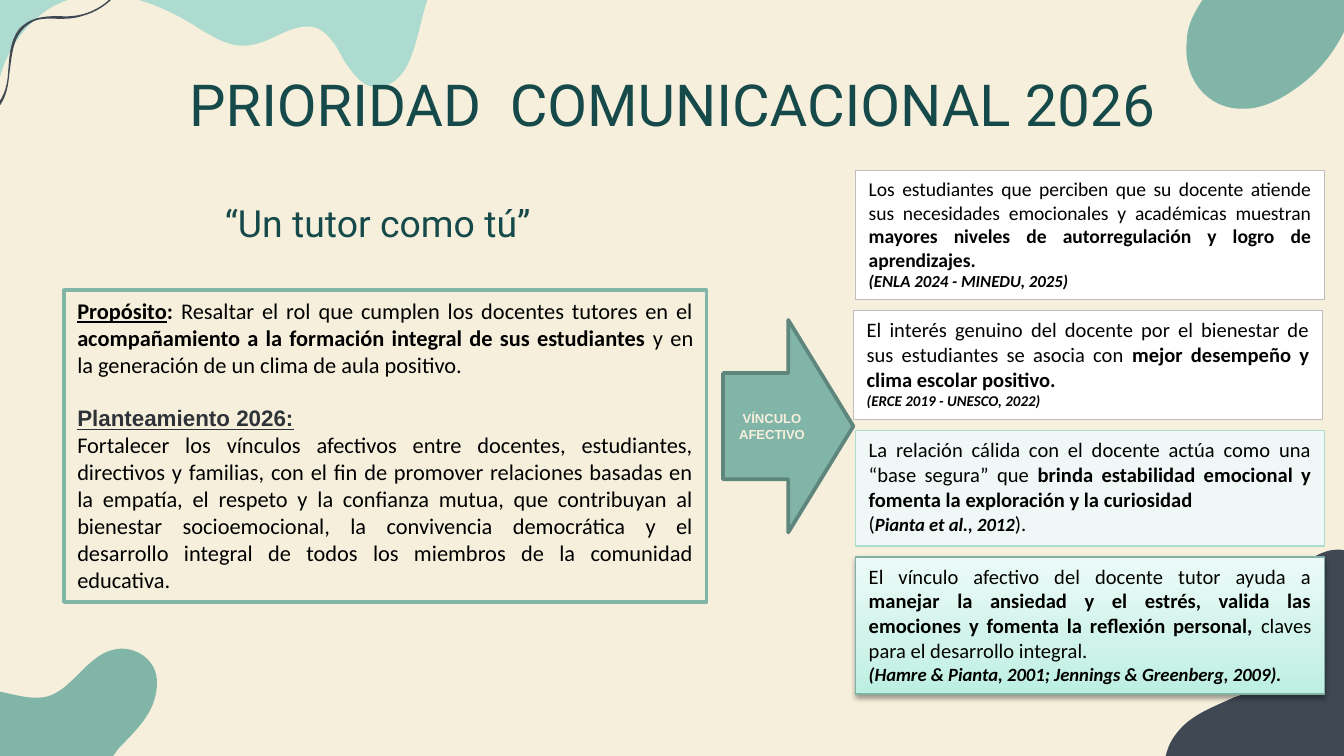
from copy import deepcopy
from dataclasses import dataclass

from lxml import etree
from pptx import Presentation
from pptx.dml.color import RGBColor
from pptx.enum.shapes import MSO_SHAPE
from pptx.enum.text import MSO_ANCHOR, MSO_AUTO_SIZE, PP_ALIGN
from pptx.oxml.ns import qn
from pptx.util import Pt

RECTANGLE, ARROW = MSO_SHAPE.RECTANGLE, MSO_SHAPE.RIGHT_ARROW
TOP, MIDDLE = MSO_ANCHOR.TOP, MSO_ANCHOR.MIDDLE
LEFT, CENTER, JUSTIFY = PP_ALIGN.LEFT, PP_ALIGN.CENTER, PP_ALIGN.JUSTIFY
GROW = MSO_AUTO_SIZE.SHAPE_TO_FIT_TEXT


@dataclass(frozen=True)
class Theme:
    cream: str = "F6EFDC"
    mint: str = "ADDBD0"
    green: str = "81B5A8"
    deep_green: str = "5F867C"
    slate: str = "3F4853"
    heading: str = "164A4A"
    subheading: str = "2E3338"
    black: str = "000000"
    white: str = "FFFFFF"
    gray: str = "BFBFBF"
    pale_mint: str = "EFF8F6"
    card_edge: str = "7DB2A5"
    card_gradient: tuple = ((0, "BCEFE1"), (0.35, "CFF3E9"), (1, "ECFBF7"))
    title_size: float = 31
    motto_size: float = 20
    body_size: float = 12
    card_size: float = 11
    small_card_size: float = 10.5
    cite_size: float = 10
    mid_cite_size: float = 9
    small_cite_size: float = 8
    arrow_size: float = 7


THEME = Theme()

# Outlines in points: a start point, then lines (x, y) and cubic curves (six numbers).
TOP_WAVE = [
    (201.6, -4.3), (-5, -4.3), (-5, 93.6), (-2.2, 75.6, -4.3, 56.2, 0.7, 38.9),
    (4.3, 27.4, 10.8, 17.3, 19.4, 10.1), (23.8, 5.8, 28.8, 2.9, 34.6, 0.7),
    (56.9, -8.6, 82.8, 0.7, 103, 13), (112.3, 18.7, 121.7, 25.2, 131.8, 24.5),
    (145.4, 23.8, 156.9, 10.8, 169.9, 15.1), (176.4, 18, 180.7, 25.2, 184.3, 32.4),
    (188.6, 38.9, 193.7, 46.1, 200.9, 46.8), (210.2, 47.5, 217.4, 38.9, 220.3, 30.2),
    (224.6, 19.4, 226.1, 6.5, 230.4, -3.6)]
RIBBON = [
    (69.8, -22.3), (68.4, -13.7, 64.1, -5.8, 57.6, 0.7), (49.7, 7.2, 41, 9.4, 31.7, 8.6),
    (23, 8.6, 15.8, 9.4, 10.1, 15.8), (5, 22.3, 5, 31.7, 4.3, 39.6),
    (3.6, 50.4, -0.7, 58.3, -10.8, 62.6), (-18.7, 66.2, -27.4, 66.2, -36, 67),
    (-43.2, 67, -51.1, 68.4, -56.2, 73.4), (-62.6, 79.2, -64.1, 90.7, -64.8, 99.4),
    (-65.5, 100.1, -64.1, 100.1, -64.1, 99.4), (-62.6, 87.8, -60.5, 74.9, -49, 70.6),
    (-41, 67, -31.7, 68.4, -23, 67), (-16.6, 66.2, -9.4, 64.8, -3.6, 60.5),
    (2.9, 54.7, 4.3, 47.5, 5, 39.6), (6.5, 29.5, 6.5, 18, 16.6, 12.2),
    (20.9, 9.4, 26.6, 10.1, 31.7, 10.1), (36, 10.1, 39.6, 10.1, 43.9, 8.6),
    (58.3, 5, 69.1, -7.9, 71.3, -22.3), (71.3, -23, 69.8, -23, 69.8, -22.3)]
BOTTOM_LEFT_BLOB = [
    (82.8, 358.6), (79.2, 350.6, 70.6, 346.3, 61.9, 347.8), (54, 349.2, 48.2, 355, 41.8, 361.4),
    (37.4, 365.8, 32.4, 370.8, 25.9, 373), (12.2, 376.6, -2.9, 366.5, -16.6, 370.1),
    (-25.9, 372.2, -31.7, 379.4, -35.3, 388.8), (-36.7, 393.1, -37.4, 397.4, -37.4, 401.8),
    (-37.4, 403.9, -37.4, 406.8, -36.7, 409), (57.6, 409),
    (59.8, 406.1, 61.9, 403.2, 64.1, 400.3), (69.8, 394.6, 75.6, 388.8, 79.9, 381.6),
    (83.5, 375.1, 85.7, 365.8, 82.8, 358.6)]
BOTTOM_RIGHT_BLOB = [
    (628.6, 429.8), (631.4, 432.7, 634.3, 436.3, 637.9, 437.8),
    (663.8, 450, 677.5, 408.2, 702.7, 414), (715, 416.9, 720, 420.5, 730.8, 409),
    (739.4, 400.3, 743, 385.9, 738.7, 374.4), (735.8, 367.9, 731.5, 362.9, 728.6, 356.4),
    (727.2, 353.5, 725.8, 349.9, 725.8, 345.6), (725.8, 333.4, 738, 324.7, 738, 312.5),
    (737.3, 299.5, 721.4, 290.9, 709.2, 295.9), (697, 300.2, 689.8, 313.2, 689, 326.9),
    (689, 334.8, 690.5, 343.4, 687.6, 351.4), (684.7, 361.4, 675.4, 367.2, 665.3, 372.2),
    (663.8, 373, 662.4, 373, 661, 373.7), (650.2, 378.7, 637.9, 383, 630.7, 392.4),
    (622.1, 402.5, 621.4, 418.3, 628.6, 429.8)]
TOP_RIGHT_BLOB = [
    (665.3, 58.3), (665.3, 58.3, 666, 58.3, 666.7, 58.3), (675.4, 58.3, 684.7, 54, 691.9, 49),
    (709.9, 37.4, 722.2, 18.7, 726.5, -2.2), (645.8, -2.2),
    (640.1, 5.8, 635.8, 13.7, 635.8, 22.3), (633.6, 41, 645.8, 58.3, 665.3, 58.3)]


def bend_edges(blob, segments):
    """Turn the straight edges that stand for curves into cubic curves."""
    edges = list(blob.element.iter(qn("a:lnTo")))
    for edge, segment in zip(edges, segments):
        if len(segment) == 6:
            curve = etree.Element(qn("a:cubicBezTo"))
            for x, y in zip(segment[::2], segment[1::2]):
                etree.SubElement(curve, qn("a:pt"), x=str(Pt(x) - blob.left),
                                 y=str(Pt(y) - blob.top))
            edge.getparent().replace(edge, curve)


def add_blob(page, outline, color):
    start, *corners = [(Pt(segment[-2]), Pt(segment[-1])) for segment in outline]
    builder = page.shapes.build_freeform(*start)
    builder.add_line_segments(corners, close=True)
    blob = builder.convert_to_shape()
    bend_edges(blob, outline[1:])
    blob.shadow.inherit = False
    blob.fill.solid()
    blob.fill.fore_color.rgb = RGBColor.from_string(color)
    blob.line.fill.background()


def add_span(para, text, size=THEME.body_size, font="Calibri", color=THEME.black,
             bold=False, italic=False, underline=False):
    span = para.add_run()
    span.text = text
    span.font.size, span.font.name = Pt(size), font
    span.font.color.rgb = RGBColor.from_string(color)
    span.font.bold, span.font.italic, span.font.underline = bold, italic, underline


def fill_text(box, paragraphs, align=JUSTIFY, anchor=TOP, insets=(7.2, 3.6, 7.2, 3.6), **base):
    """Write paragraphs, each a list of (text, format) pairs, over a base format."""
    frame = box.text_frame
    frame.word_wrap, frame.vertical_anchor = True, anchor
    (frame.margin_left, frame.margin_top,
     frame.margin_right, frame.margin_bottom) = map(Pt, insets)
    for index, spans in enumerate(paragraphs):
        para = frame.add_paragraph() if index else frame.paragraphs[0]
        para.alignment = align
        for text, style in spans:
            add_span(para, text, **{**base, **style})
    return frame


def add_panel(page, kind, frame, fill, edge, weight):
    panel = page.shapes.add_shape(kind, *map(Pt, frame))
    panel.shadow.inherit = False
    panel.fill.solid()
    panel.fill.fore_color.rgb = RGBColor.from_string(fill)
    panel.line.color.rgb = RGBColor.from_string(edge)
    panel.line.width = Pt(weight)
    return panel


def add_glow(panel):
    """Give a panel the upward three-stop gradient and a soft shadow."""
    panel.fill.gradient()
    panel.fill.gradient_angle = 90
    stop_list = panel.element.spPr.find(qn("a:gradFill")).find(qn("a:gsLst"))
    stop_list.append(deepcopy(stop_list[0]))
    for stop, (position, color) in zip(panel.fill.gradient_stops, THEME.card_gradient):
        stop.position = position
        stop.color.rgb = RGBColor.from_string(color)
    effects = panel.element.spPr.find(qn("a:effectLst"))
    shadow = etree.SubElement(effects, qn("a:outerShdw"), blurRad=str(Pt(3.1)),
                              dist=str(Pt(1.6)), dir="5400000", rotWithShape="0")
    color = etree.SubElement(shadow, qn("a:srgbClr"), val=THEME.black)
    etree.SubElement(color, qn("a:alpha"), val="38000")


def add_headings(page):
    title = page.shapes.add_textbox(*map(Pt, (56.2, 36.7, 607.7, 36)))
    fill_text(title, [[("PRIORIDAD  COMUNICACIONAL 2026", {})]], CENTER, insets=(0, 0, 0, 0),
              size=THEME.title_size, font="Roboto", color=THEME.heading)
    motto = page.shapes.add_textbox(*map(Pt, (-12.2, 99.4, 413.3, 52.6)))
    frame = fill_text(motto, [[("“Un tutor como tú”", {})]], CENTER, insets=(23, 10.7, 7.2, 3.6),
                      size=THEME.motto_size, font="Roboto", color=THEME.heading)
    frame.paragraphs[0].line_spacing = 0.9


def add_purpose(page):
    bold, underlined = {"bold": True}, {"bold": True, "underline": True}
    box = add_panel(page, RECTANGLE, (34.3, 155.5, 344.2, 167), THEME.cream, THEME.green, 2)
    frame = fill_text(box, [
        [("Propósito", underlined), (": ", bold),
         ("Resaltar el rol que cumplen los docentes tutores en el ", {}),
         ("acompañamiento a la formación integral de sus estudiantes", bold),
         (" y en la generación de un clima de aula positivo.", {})],
        [("Planteamiento 2026:", {**underlined, "font": "Arial", "color": THEME.subheading})],
        [("Fortalecer los vínculos afectivos entre docentes, estudiantes, directivos y familias, "
          "con el fin de promover relaciones basadas en la empatía, el respeto y la confianza "
          "mutua, que contribuyan al bienestar socioemocional, la convivencia democrática y el "
          "desarrollo integral de todos los miembros de la comunidad educativa.", {})]])
    frame.auto_size = GROW
    frame.paragraphs[1].alignment = LEFT
    frame.paragraphs[1].space_before = Pt(14.5)


def add_cards(page):
    bold, cite = {"bold": True}, {"bold": True, "italic": True}
    cards = [
        (458.3, 69.1, THEME.white, THEME.gray, THEME.small_card_size, [
            [("Los estudiantes que perciben que su docente atiende sus necesidades emocionales y "
              "académicas muestran ", {}),
             ("mayores niveles de autorregulación y logro de aprendizajes.", bold)],
            [("(ENLA 2024 - MINEDU, 2025)", {**cite, "size": THEME.mid_cite_size})]]),
        (457.2, 58.3, THEME.white, THEME.gray, THEME.card_size, [
            [("El interés genuino del docente por el bienestar de sus estudiantes se asocia con ",
              {}), ("mejor desempeño y clima escolar positivo.", bold)],
            [("(ERCE 2019 - UNESCO, 2022)", {**cite, "size": THEME.small_cite_size})]]),
        (458.3, 61.7, THEME.pale_mint, THEME.mint, THEME.card_size, [
            [("La relación cálida con el docente actúa como una “base segura” que ", {}),
             ("brinda estabilidad emocional y fomenta la exploración y la curiosidad", bold)],
            [("(", {}), ("Pianta et al., 2012", {**cite, "size": THEME.cite_size}), (").", {})]]),
        (458.3, 73.4, THEME.white, THEME.card_edge, THEME.card_size, [
            [("El vínculo afectivo del docente tutor ayuda a ", {}),
             ("manejar la ansiedad y el estrés, valida las emociones y fomenta la reflexión "
              "personal, ", bold), ("claves para el desarrollo integral.", {})],
            [("(Hamre & Pianta, 2001; Jennings & Greenberg, 2009).",
              {**cite, "size": THEME.cite_size})]])]
    top, gap = 91.4, 6
    for left, height, fill, edge, size, paragraphs in cards:
        card = add_panel(page, RECTANGLE, (left, top, 251.3, height), fill, edge, 0.75)
        fill_text(card, paragraphs, size=size).auto_size = GROW
        top += height + gap
    add_glow(card)


def main():
    deck = Presentation()
    deck.slide_width, deck.slide_height = Pt(720), Pt(405)
    page = deck.slides.add_slide(deck.slide_layouts[6])
    page.background.fill.solid()
    page.background.fill.fore_color.rgb = RGBColor.from_string(THEME.cream)
    for outline, color in ((TOP_WAVE, THEME.mint), (RIBBON, THEME.slate),
                           (BOTTOM_LEFT_BLOB, THEME.green), (BOTTOM_RIGHT_BLOB, THEME.slate),
                           (TOP_RIGHT_BLOB, THEME.green)):
        add_blob(page, outline, color)
    add_headings(page)
    add_purpose(page)
    arrow = add_panel(page, ARROW, (387.4, 171.4, 69.8, 113.8), THEME.green, THEME.deep_green, 2)
    fill_text(arrow, [[("VÍNCULO AFECTIVO", {})]], CENTER, MIDDLE,
              size=THEME.arrow_size, font="Arial", color=THEME.cream, bold=True)
    add_cards(page)
    deck.save("out.pptx")


if __name__ == "__main__":
    main()
